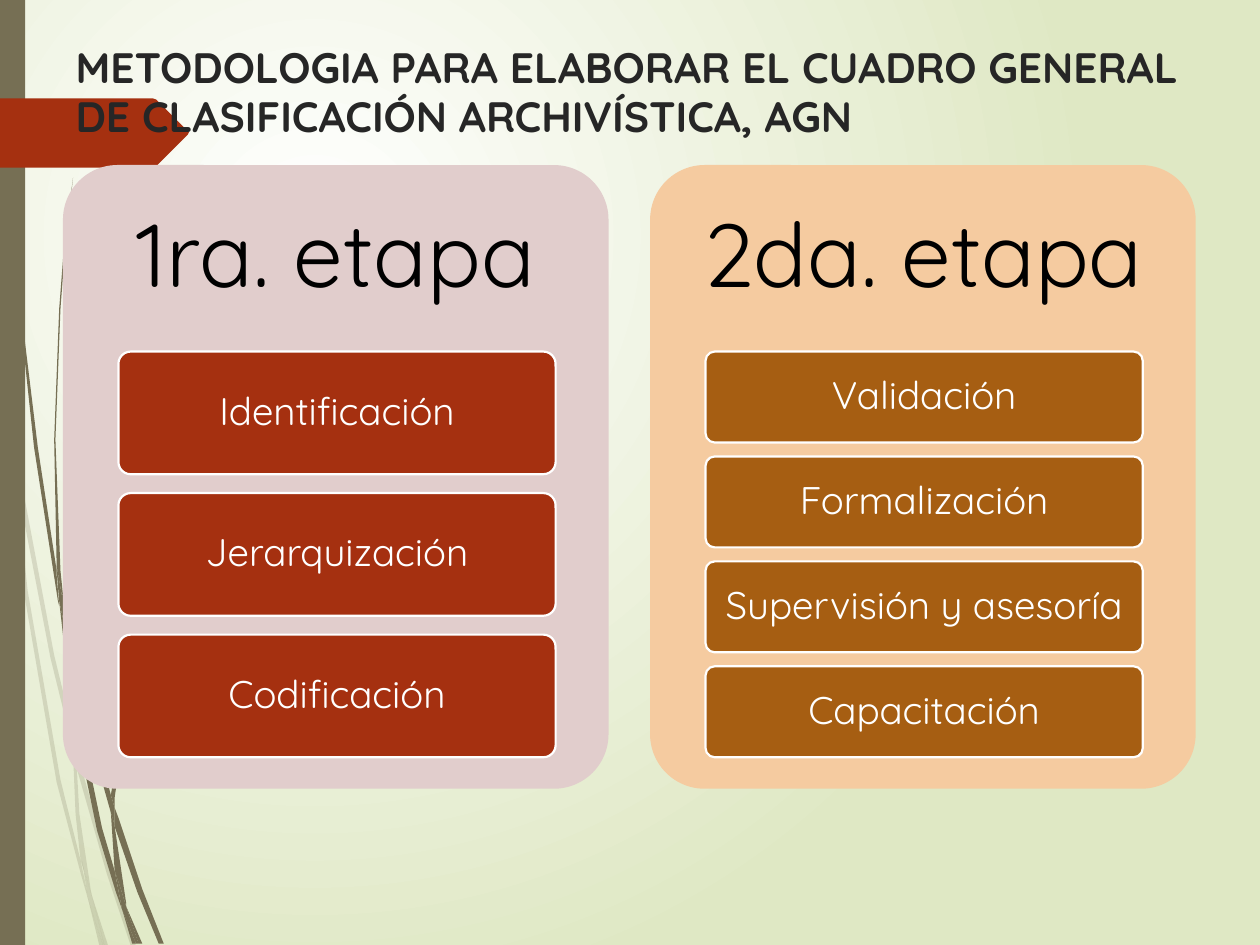
from lxml.etree import SubElement
from pptx import Presentation
from pptx.dml.color import RGBColor
from pptx.enum.shapes import MSO_SHAPE
from pptx.enum.text import MSO_ANCHOR, PP_ALIGN
from pptx.oxml.ns import qn
from pptx.util import Pt

PX = 9144  # EMU per px, 100 px to the inch
FONT = "Quicksand"
WHITE = RGBColor(0xFF, 0xFF, 0xFF)
BLACK = RGBColor(0x00, 0x00, 0x00)
INK = RGBColor(0x26, 0x26, 0x26)
GREEN = RGBColor(0xDF, 0xE8, 0xC4)
OLIVE = RGBColor(0x76, 0x6F, 0x54)
RED = RGBColor(0xA5, 0x30, 0x10)
BROWN = RGBColor(0xA6, 0x5E, 0x12)
PINK = RGBColor(0xE1, 0xCD, 0xCC)
PEACH = RGBColor(0xF5, 0xCB, 0xA0)

TITLE = "METODOLOGIA PARA ELABORAR EL CUADRO GENERAL DE CLASIFICACIÓN ARCHIVÍSTICA, AGN"
STAGES = [
    (50, "1ra. etapa", PINK, RED, ["Identificación", "Jerarquización", "Codificación"]),
    (516, "2da. etapa", PEACH, BROWN,
     ["Validación", "Formalización", "Supervisión y asesoría", "Capacitación"]),
]

PALE_WISPS = [
    [(8, 350), (6, 322), (0, 282), (0, 299), (7, 344)],
    [(40, 522), (59, 599), (59, 586), (43, 520), (10, 345), (12, 376)],
    [(64, 607), (61, 596), (61, 610), (85, 694), (104, 751), (108, 751), (88, 692)],
    [(83, 751), (86, 751), (73, 711)],
    [(64, 683), (48, 619), (22, 469), (12, 376), (8, 350), (19, 470), (45, 621),
     (64, 693), (70, 714), (69, 707)],
    [(58, 599), (60, 646), (64, 683), (67, 692), (73, 711), (72, 706), (63, 646),
     (61, 610), (61, 608)],
    [(70, 714), (79, 751), (82, 751)],
    [(67, 692), (65, 683), (69, 707), (70, 714), (82, 751), (83, 751), (73, 711)],
]
DARK_WISPS = [
    [(5, 110), (14, 233), (27, 355), (46, 477), (47, 481), (45, 457), (45, 453),
     (30, 355), (15, 232), (6, 109), (4, 48), (3, 0), (2, 0), (3, 48)],
    [(73, 592), (88, 645), (88, 633), (88, 631), (77, 590), (50, 472), (53, 505)],
    [(94, 649), (91, 641), (91, 656), (109, 708), (126, 749), (130, 749), (113, 706)],
    [(91, 691), (81, 657), (60, 556), (53, 505), (47, 477), (56, 557), (77, 659),
     (92, 708), (97, 722), (96, 717)],
    [(50, 472), (48, 453), (44, 349), (48, 245), (52, 193), (58, 141), (51, 193),
     (47, 245), (43, 349), (45, 449), (49, 472)],
    [(110, 749), (113, 749), (100, 719)],
    [(47, 477), (53, 505), (50, 472), (49, 472), (45, 449), (45, 453)],
    [(91, 633), (103, 552), (131, 476), (169, 406), (191, 374), (203, 359), (216, 344),
     (215, 344), (203, 358), (191, 373), (168, 405), (129, 474), (101, 551), (88, 631),
     (91, 641)],
    [(97, 722), (105, 749), (108, 749)],
    [(88, 645), (91, 691), (96, 706), (100, 719), (100, 716), (91, 656), (90, 651)],
    [(88, 645), (90, 651), (91, 656), (91, 641), (88, 631), (88, 633)],
    [(96, 706), (91, 691), (96, 717), (97, 722), (108, 749), (110, 749), (100, 719)],
]
TAG = [(149, 107), (124, 132), (121, 133), (0, 133), (0, 78), (121, 78), (124, 79),
       (149, 104), (150, 105)]


def px(*lengths):
    return [round(n * PX) for n in lengths]


def paint_background(s):
    """Radial gradient from white to pale green."""
    fill = s.background.fill
    fill.gradient()
    for stop, color in zip(fill.gradient_stops, (WHITE, GREEN)):
        stop.color.rgb = color
    lin = s.background._cSld.find(".//" + qn("a:lin"))
    grad = lin.getparent()
    grad.remove(lin)
    radial = SubElement(grad, qn("a:path"), path="circle")
    SubElement(radial, qn("a:fillToRect"), l="50000", t="50000", r="100000", b="100000")


def style(sp, fill, line=None):
    sp.shadow.inherit = False
    sp.fill.solid()
    sp.fill.fore_color.rgb = fill
    if line is None:
        sp.line.fill.background()
    else:
        sp.line.color.rgb = line
        sp.line.width = Pt(1.25)


def add_outline(shapes, points, color, opacity=100):
    builder = shapes.build_freeform(*points[0], scale=PX)
    builder.add_line_segments(points[1:], close=True)
    sp = builder.convert_to_shape()
    style(sp, color)
    if opacity < 100:
        clr = sp._element.spPr.find(".//" + qn("a:srgbClr"))
        SubElement(clr, qn("a:alpha"), val=str(opacity * 1000))


def add_wisps(s, outlines, opacity):
    group = s.shapes.add_group_shape()
    for points in outlines:
        add_outline(group.shapes, points, OLIVE, opacity)


def add_box(s, kind, box, fill, line=None):
    sp = s.shapes.add_shape(kind, *px(*box))
    style(sp, fill, line)
    if kind == MSO_SHAPE.ROUNDED_RECTANGLE:
        sp.adjustments[0] = 0.1
    return sp


def write(sp, text, size, color, inset, bold=False, align=PP_ALIGN.CENTER,
          anchor=MSO_ANCHOR.MIDDLE, spacing=0.9):
    tf = sp.text_frame
    tf.word_wrap = True
    tf.vertical_anchor = anchor
    tf.margin_left = tf.margin_right = inset[0] * PX
    tf.margin_top = tf.margin_bottom = inset[1] * PX
    p = tf.paragraphs[0]
    p.alignment = align
    p.line_spacing = spacing
    r = p.add_run()
    r.text = text
    r.font.name = FONT
    r.font.size = Pt(size)
    r.font.bold = bold
    r.font.color.rgb = color


def place_title(s):
    title = s.shapes.title
    title.left, title.top, title.width, title.height = px(50, 29, 919, 75)
    write(title, TITLE, 24.3, INK, (10, 6), bold=True, align=PP_ALIGN.LEFT,
          anchor=MSO_ANCHOR.TOP, spacing=0.96)
    s.shapes._spTree.append(title._element)  # in front of the decoration


def add_stage(s, left, heading, panel_color, card_color, steps):
    """Panel with a heading and cards that share its lower part equally."""
    add_box(s, MSO_SHAPE.ROUNDED_RECTANGLE, (left, 131, 433, 495), panel_color)
    write(s.shapes.add_textbox(*px(left, 131, 433, 148)), heading, 51, BLACK, (21, 21))
    top, total, gap_ratio = 279, 322, 2 / 13
    height = total / (len(steps) + gap_ratio * (len(steps) - 1))
    for i, step in enumerate(steps):
        y = top + i * height * (1 + gap_ratio)
        card = add_box(s, MSO_SHAPE.ROUNDED_RECTANGLE, (left + 44, y, 347, height),
                       card_color, WHITE)
        write(card, step, 22, WHITE, (6, 5))


def main():
    prs = Presentation()
    prs.slide_width, prs.slide_height = px(1000, 750)
    s = prs.slides.add_slide(prs.slide_layouts[5])
    paint_background(s)
    add_wisps(s, PALE_WISPS, 20)
    add_wisps(s, DARK_WISPS, 100)
    add_box(s, MSO_SHAPE.RECTANGLE, (0, 0, 20, 750), OLIVE)
    add_outline(s.shapes, TAG, RED)
    place_title(s)
    for stage in STAGES:
        add_stage(s, *stage)
    prs.save("out.pptx")


if __name__ == "__main__":
    main()
